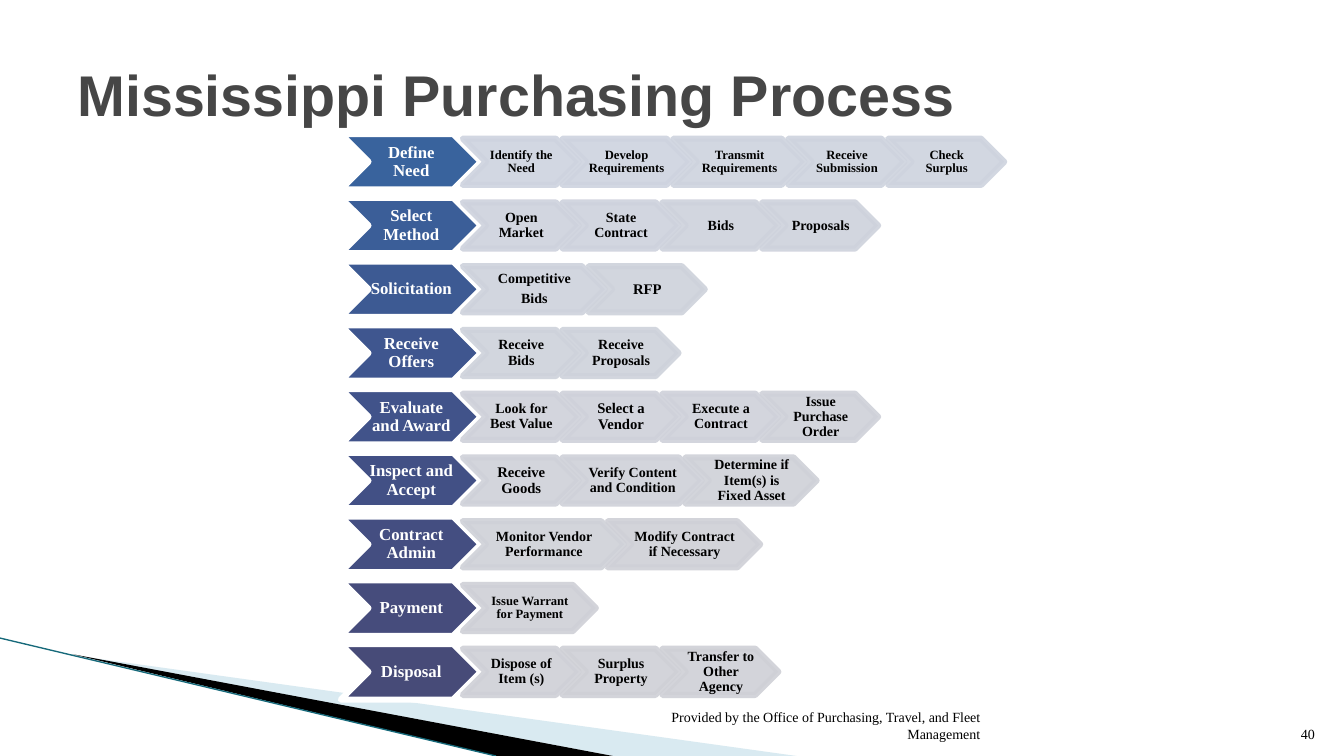
from lxml import etree
from pptx import Presentation
from pptx import util as u
from pptx.dml.color import RGBColor
from pptx.enum import shapes, text
from pptx.oxml.ns import qn

SERIF = "Times New Roman"
STEP_WIDTH, STEP_SIZE = 1.15, 10
FIRST_STEP, LAST_STEP = "CED3DF", "CFD0D6"

# Stage, colour, steps as (text, width, size); width and size may be left out
STAGES = [
    ("Define Need", "39639D", [
        ("Identify the Need", 1.15, 9), ("Develop Requirements", 1.26, 9),
        ("Transmit Requirements", 1.3, 9), ("Receive Submission", 1.15, 9),
        ("Check Surplus", 1.15, 9)]),
    ("Select Method", "3B5E98", [
        ("Open Market",), ("State Contract",), ("Bids",), ("Proposals",)]),
    ("Solicitation", "3D5A93", [
        ("Competitive\nBids", 1.41), ("RFP", 1.15, 10.5)]),
    ("Receive Offers", "3F568F", [("Receive Bids",), ("Receive Proposals",)]),
    ("Evaluate and Award", "41538A", [
        ("Look for Best Value",), ("Select a Vendor", 1.15, 10.5),
        ("Execute a Contract",), ("Issue Purchase Order",)]),
    ("Inspect and Accept", "425085", [
        ("Receive Goods", 1.15, 10.5), ("Verify Content and Condition", 1.38),
        ("Determine if Item(s) is Fixed Asset", 1.3)]),
    ("Contract Admin", "444E81", [
        ("Monitor Vendor Performance", 1.6),
        ("Modify Contract if Necessary", 1.51)]),
    ("Payment", "464C7C", [("Issue Warrant for Payment", 1.32, 9)]),
    ("Disposal", "474B78", [
        ("Dispose of Item (s)",), ("Surplus Property",),
        ("Transfer to Other Agency",)]),
]


def rgb(color):
    return RGBColor.from_string(color)


def blend(start, end, share):
    """Return the hex colour lying at share (0 to 1) between two others."""
    pairs = zip(bytes.fromhex(start), bytes.fromhex(end))
    return "".join(f"{round(a + (b - a) * share):02X}" for a, b in pairs)


def paint(fill, color, alpha=100):
    fill.solid()
    fill.fore_color.rgb = rgb(color)
    if alpha < 100:
        value = fill.fore_color._xFill.find(qn("a:srgbClr"))
        etree.SubElement(value, qn("a:alpha")).set("val", str(alpha * 1000))


def write(frame, content, size, color="000000", font=SERIF, bold=False,
          align=text.PP_ALIGN.LEFT, anchor=text.MSO_ANCHOR.MIDDLE,
          insets=(0.1, 0.05, 0.1, 0.05), spacing=1, after=0):
    """Fill a text frame, one paragraph for each line of content."""
    frame.word_wrap = True
    frame.vertical_anchor = anchor
    (frame.margin_left, frame.margin_top,
     frame.margin_right, frame.margin_bottom) = map(u.Inches, insets)
    for number, line in enumerate(content.split("\n")):
        paragraph = frame.add_paragraph() if number else frame.paragraphs[0]
        paragraph.alignment = align
        paragraph.line_spacing = spacing
        paragraph.space_after = u.Pt(after)
        run = paragraph.add_run()
        run.text = line
        run.font.name, run.font.size, run.font.bold = font, u.Pt(size), bold
        run.font.color.rgb = rgb(color)


def label(slide, box, content, size, **style):
    area = slide.shapes.add_textbox(*map(u.Inches, box))
    write(area.text_frame, content, size, **style)


def chevron(slide, box, content, size, fill, line, color, alpha=100):
    arrow = slide.shapes.add_shape(shapes.MSO_SHAPE.CHEVRON,
                                   *map(u.Inches, box))
    arrow.shadow.inherit = False
    paint(arrow.fill, fill, alpha)
    paint(arrow.line.fill, line, alpha)
    arrow.line.width = u.Pt(4.33)
    write(arrow.text_frame, content, size, color=color, bold=True,
          align=text.PP_ALIGN.CENTER, insets=(0.01, 0.01, 0, 0.01),
          spacing=0.9, after=0.35 * size)


def wedge(slide, points, color, alpha=100):
    corners = [(u.Inches(x), u.Inches(y)) for x, y in points]
    builder = slide.shapes.build_freeform(*corners[0])
    builder.add_line_segments(corners[1:], close=True)
    sliver = builder.convert_to_shape()
    sliver.shadow.inherit = False
    paint(sliver.fill, color, alpha)
    sliver.line.fill.background()


def corner_decoration(slide, box):
    left, top, width, height = box
    right, bottom = left + width, top + height
    tip, middle = left + 0.72, left + 6.08
    wedge(slide, [(tip, top + 0.17), (right, bottom), (middle, bottom)],
          "A0CBDC", 40)
    wedge(slide, [(tip, top + 0.16), (middle, bottom), (left + 4.92, bottom)],
          "000000")
    edge = slide.shapes.add_connector(
        shapes.MSO_CONNECTOR.STRAIGHT, u.Inches(left), u.Inches(top),
        u.Inches(left + 4.92), u.Inches(bottom))
    edge.line.color.rgb = rgb("16697A")
    edge.line.width = u.Pt(0.95)
    etree.SubElement(edge._element.spPr, qn("a:effectLst"))


def process(slide, box):
    """Draw one row of chevrons for each stage, evenly spaced in the box."""
    left, top, _, height = box
    stage_width, stage_height, step_height = 1.39, 0.55, 0.46
    pitch = (height - stage_height) / (len(STAGES) - 1)
    last = sum(len(steps) for _, _, steps in STAGES) - 1
    drawn = 0
    for row, (stage, fill, steps) in enumerate(STAGES):
        y = top + row * pitch
        chevron(slide, (left, y, stage_width, stage_height), stage, 12,
                fill, "FFFFFF", "FFFFFF")
        x = left + stage_width - 0.18
        y += (stage_height - step_height) / 2
        for step, *options in steps:
            width, size = options + [STEP_WIDTH, STEP_SIZE][len(options):]
            tint = blend(FIRST_STEP, LAST_STEP, drawn / last)
            chevron(slide, (x, y, width, step_height), step, size,
                    tint, tint, "000000", 90)
            x += width - 0.16
            drawn += 1


def footer(slide, box):
    left, top, width, height = box
    style = {"align": text.PP_ALIGN.RIGHT, "anchor": text.MSO_ANCHOR.BOTTOM}
    label(slide, (left, top, 3.43, height),
          "Provided by the Office of Purchasing, Travel, and Fleet Management",
          10, **style)
    label(slide, (left + width - 0.53, top, 0.53, height), "40", 10, **style)


def main():
    deck = Presentation()
    deck.slide_width, deck.slide_height = u.Inches(13.33), u.Inches(7.5)
    slide = deck.slides.add_slide(deck.slide_layouts[6])
    corner_decoration(slide, (0, 6.33, 7.9, 1.17))
    process(slide, (3.38, 1.33, 6.57, 5.61))
    label(slide, (0.67, 0.3, 12, 1.25), "Mississippi Purchasing Process", 41,
          color="464646", font="Arial", bold=True)
    footer(slide, (6.39, 7.01, 6.75, 0.4))
    deck.save("out.pptx")


if __name__ == "__main__":
    main()
